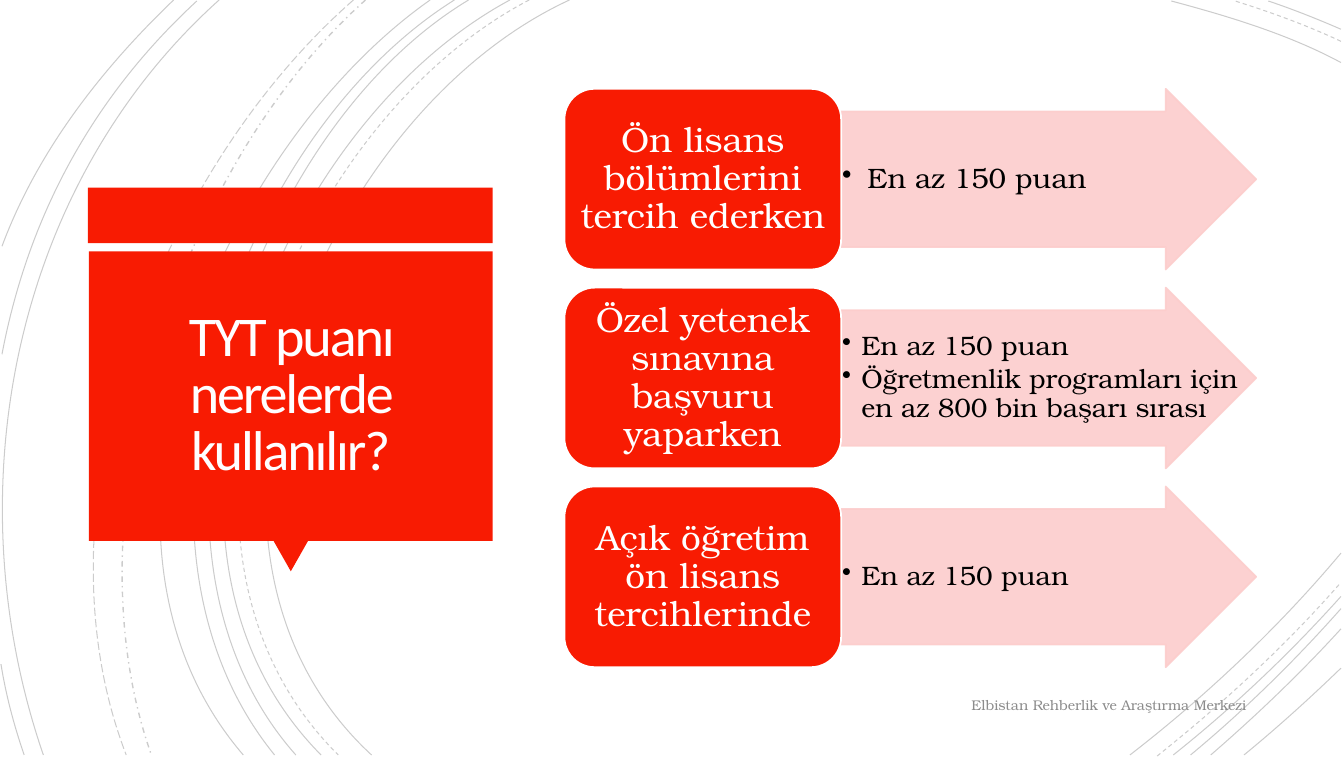
from lxml import etree
from pptx import Presentation
from pptx.dml.color import RGBColor
from pptx.enum.dml import MSO_LINE
from pptx.enum.shapes import MSO_SHAPE
from pptx.enum.text import MSO_ANCHOR, PP_ALIGN
from pptx.oxml.ns import qn
from pptx.util import Pt

PX = 9144  # 100 px to the inch
RECT, TRIANGLE = MSO_SHAPE.RECTANGLE, MSO_SHAPE.ISOSCELES_TRIANGLE
ROUNDED, ARROW = MSO_SHAPE.ROUNDED_RECTANGLE, MSO_SHAPE.RIGHT_ARROW
SOLID, DASH = MSO_LINE.SOLID, MSO_LINE.DASH
DASH_DOT, LONG_DASH = MSO_LINE.DASH_DOT, MSO_LINE.LONG_DASH
LEFT, CENTER, RIGHT = PP_ALIGN.LEFT, PP_ALIGN.CENTER, PP_ALIGN.RIGHT
MIDDLE = MSO_ANCHOR.MIDDLE
COLORS = {"red": "F81B02", "pink": "FCCDCC", "white": "FFFFFF", "title": "FFFEFF",
          "black": "000000", "gray": "8C8C8C"}
SERIF, SANS = "TeX Gyre Bonum", "Calibri"

prs = Presentation()
prs.slide_width, prs.slide_height = 1331 * PX, 750 * PX
slide = prs.slides.add_slide(prs.slide_layouts[6])
shapes = slide.shapes


def style_shape(shape, fill=None, line=None, width=1.25, opacity=100):
    shape.shadow.inherit = False
    for part, color in ((shape.fill, fill), (shape.line.fill, line)):
        if color:
            part.solid()
            part.fore_color.rgb = RGBColor.from_string(COLORS[color])
        else:
            part.background()
    if line:
        shape.line.width = Pt(width)
    if opacity < 100:
        for color in shape.element.spPr.iter(qn("a:srgbClr")):
            etree.SubElement(color, qn("a:alpha")).set("val", str(opacity * 1000))


def write_text(shape, text, size, color, align, margin, font=SERIF, spacing=0.9):
    frame = shape.text_frame
    frame.text = text
    frame.word_wrap = True
    frame.vertical_anchor = MIDDLE
    frame.margin_left = frame.margin_right = margin * PX
    frame.margin_top = frame.margin_bottom = margin * PX
    for paragraph in frame.paragraphs:
        paragraph.alignment = align
        paragraph.line_spacing = spacing
        for run in paragraph.runs:
            run.font.name = font
            run.font.size = Pt(size)
            run.font.color.rgb = RGBColor.from_string(COLORS[color])
    return frame.paragraphs


# Background arcs: start, two control points and end of each cubic curve
arcs = [
    (SOLID, 0.75, [
        ((564, 0), (314, 115), (143, 540), (368, 748)),
        ((1328, 62), (1276, 34), (1216, 16), (1160, 1)),
        ((1119, 748), (1194, 690), (1266, 622), (1328, 548)),
        ((505, 0), (269, 127), (109, 537), (318, 748)),
        ((1328, 29), (1305, 19), (1280, 9), (1256, 1)),
        ((1162, 748), (1221, 701), (1277, 648), (1328, 591)),
        ((464, 0), (243, 133), (109, 541), (293, 748)),
        ((1179, 748), (1232, 704), (1282, 655), (1328, 603)),
        ((450, 0), (230, 138), (97, 533), (272, 748)),
        ((1199, 748), (1244, 709), (1288, 667), (1328, 623)),
        ((426, 0), (217, 147), (53, 529), (241, 748)),
        ((1232, 748), (1265, 721), (1297, 692), (1328, 662)),
        ((217, 0), (11, 185), (-46, 490), (43, 748)),
        ((195, 1), (92, 96), (28, 214), (2, 351)),
        ((1, 658), (6, 689), (14, 719), (24, 748)),
        ((172, 0), (100, 69), (37, 150), (2, 244)),
    ]),
    (DASH, 0.75, [
        ((524, 0), (284, 125), (122, 537), (335, 748)),
        ((1328, 41), (1294, 25), (1258, 12), (1223, 1)),
        ((1146, 749), (1210, 698), (1273, 640), (1328, 577)),
    ]),
    (DASH_DOT, 1, [((362, 0), (176, 166), (65, 509), (150, 748))]),
    (LONG_DASH, 0.75, [((350, 0), (157, 169), (29, 499), (125, 748))]),
]
for dash, width, curves in arcs:
    for start, *bends in curves:
        builder = shapes.build_freeform(*start, scale=PX)
        builder.add_line_segments(bends, close=False)
        arc = builder.convert_to_shape()
        style_shape(arc, line="black", width=width, opacity=20)
        arc.line.dash_style = dash
        # Turn the three straight segments into one cubic curve
        outline = next(arc.element.iter(qn("a:path")))
        segments = outline.findall(qn("a:lnTo"))
        cubic = etree.SubElement(outline, qn("a:cubicBezTo"))
        for segment in segments:
            cubic.append(segment[0])
            outline.remove(segment)

# Title callout
banner = shapes.add_shape(RECT, 87 * PX, 186 * PX, 401 * PX, 55 * PX)
pointer = shapes.add_shape(TRIANGLE, 271 * PX, 536 * PX, 34 * PX, 30 * PX)
pointer.rotation = 180
title = shapes.add_shape(RECT, 88 * PX, 249 * PX, 400 * PX, 287 * PX)
for callout_part in (banner, pointer, title):
    style_shape(callout_part, fill="red")
for paragraph in write_text(title, "TYT puanı nerelerde kullanılır?", 40, "title",
                            CENTER, 34, SANS, 0.85):
    for run in paragraph.runs:
        run.font._element.set("spc", "-150")

# Uses of the score: label, required score, text size, bullet indent
uses = [
    ("Ön lisans bölümlerini tercih ederken", "En az 150 puan", 20, 25),
    ("Özel yetenek sınavına başvuru yaparken",
     "En az 150 puan\nÖğretmenlik programları için en az 800 bin başarı sırası", 19, 19),
    ("Açık öğretim ön lisans tercihlerinde", "En az 150 puan", 19, 19),
]
for row, (label, requirement, size, indent) in enumerate(uses):
    top = (88 + 197 * row) * PX
    arrow_box = (833 * PX, top, 411 * PX, 179 * PX)
    arrow = shapes.add_shape(ARROW, *arrow_box)
    arrow.adjustments[0] = 0.75
    arrow.adjustments[1] = 0.5
    style_shape(arrow, fill="pink", line="pink", opacity=90)

    conditions = shapes.add_textbox(*arrow_box)
    for paragraph in write_text(conditions, requirement, size, "black", LEFT, 1):
        paragraph.space_after = Pt(3)
        properties = paragraph._p.get_or_add_pPr()
        properties.set("marL", str(indent * PX))
        properties.set("indent", str(-indent * PX))
        etree.SubElement(properties, qn("a:buChar")).set("char", "•")

    use = shapes.add_shape(ROUNDED, 559 * PX, top, 274 * PX, 179 * PX)
    style_shape(use, fill="red", line="white")
    write_text(use, label, 25, "white", CENTER, 1)

# Footer
footer = shapes.add_textbox(88 * PX, 681 * PX, 1156 * PX, 35 * PX)
write_text(footer, "Elbistan Rehberlik ve Araştırma Merkezi", 10, "gray", RIGHT, 10,
           spacing=1.0)

prs.save("out.pptx")
